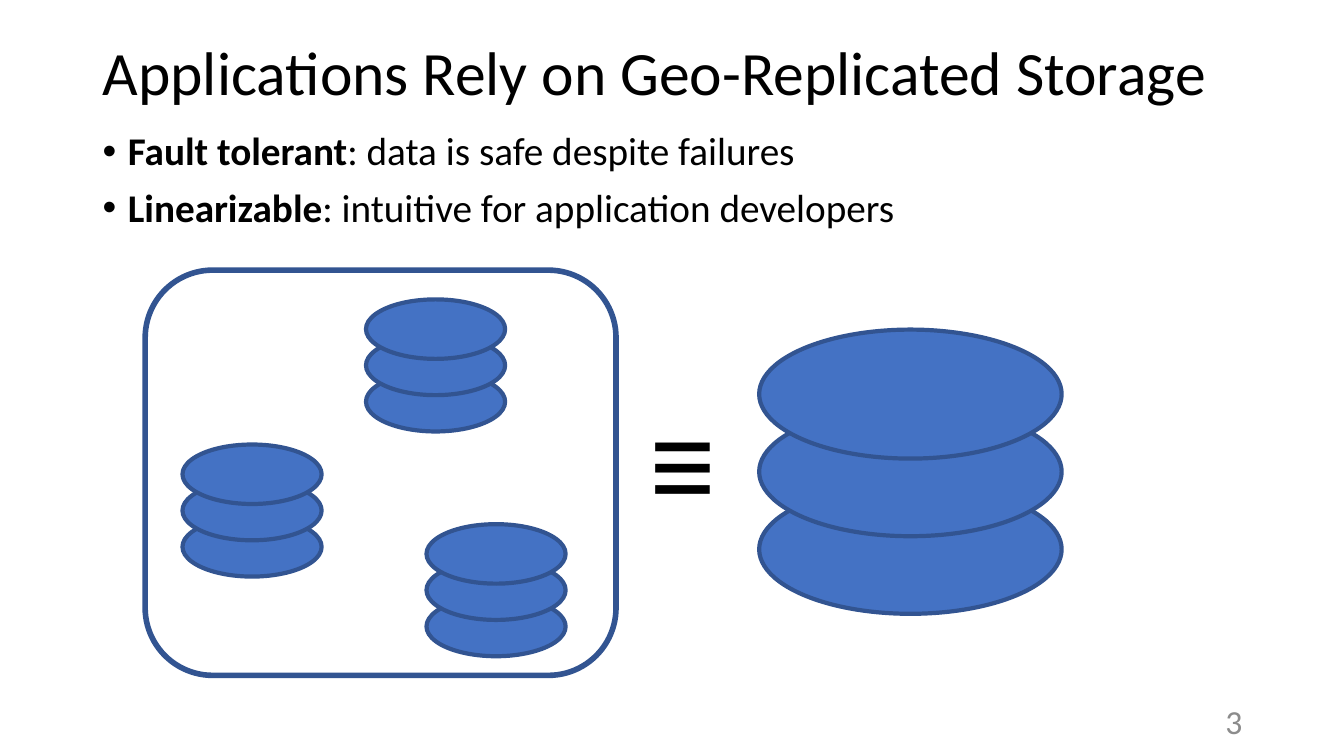
from lxml.etree import SubElement
from pptx import Presentation
from pptx.dml.color import RGBColor
from pptx.enum.shapes import MSO_SHAPE
from pptx.enum.text import MSO_ANCHOR, PP_ALIGN
from pptx.oxml.ns import qn
from pptx.util import Inches, Pt

FONT = "Calibri"
BLACK = RGBColor(0x00, 0x00, 0x00)
GRAY = RGBColor(0x8C, 0x8C, 0x8C)
BLUE = RGBColor(0x44, 0x72, 0xC4)
DARK_BLUE = RGBColor(0x32, 0x54, 0x91)

BENEFITS = [
    ("Fault tolerant", ": data is safe despite failures"),
    ("Linearizable", ": intuitive for application developers"),
]
REPLICAS = [(4.23, 5.2), (3.63, 2.97), (1.81, 4.41)]


def add_text_box(slide, left, top, width, height, anchor=MSO_ANCHOR.TOP, wrap=True):
    box = slide.shapes.add_textbox(Inches(left), Inches(top), Inches(width), Inches(height))
    frame = box.text_frame
    frame.word_wrap = wrap
    frame.vertical_anchor = anchor
    return frame


def add_run(paragraph, text, size, color=BLACK, bold=False):
    run = paragraph.add_run()
    run.text = text
    run.font.name = FONT
    run.font.size = Pt(size)
    run.font.bold = bold
    run.font.color.rgb = color


def set_bullet(paragraph):
    properties = paragraph._p.get_or_add_pPr()
    properties.set("marL", str(Inches(0.25)))
    properties.set("indent", str(Inches(-0.25)))
    SubElement(properties, qn("a:buFont")).set("typeface", "Arial")
    SubElement(properties, qn("a:buChar")).set("char", "•")


def add_title(slide, text):
    frame = add_text_box(slide, 0.92, 0.02, 11.5, 1.45, MSO_ANCHOR.MIDDLE)
    paragraph = frame.paragraphs[0]
    paragraph.line_spacing = 0.9
    add_run(paragraph, text, 44)


def add_benefits(slide):
    frame = add_text_box(slide, 0.92, 1.26, 11.5, 1.18)
    for index, (term, explanation) in enumerate(BENEFITS):
        paragraph = frame.add_paragraph() if index else frame.paragraphs[0]
        paragraph.line_spacing = 0.9
        paragraph.space_before = Pt(10)
        set_bullet(paragraph)
        add_run(paragraph, term, 28, bold=True)
        add_run(paragraph, explanation, 28)


def add_slide_number(slide, number):
    frame = add_text_box(slide, 9.42, 6.95, 3, 0.4, MSO_ANCHOR.MIDDLE)
    paragraph = frame.paragraphs[0]
    paragraph.alignment = PP_ALIGN.RIGHT
    add_run(paragraph, number, 24, GRAY)


def add_outlined_shape(shapes, kind, left, top, width, height, line_width, fill=None):
    shape = shapes.add_shape(kind, Inches(left), Inches(top), Inches(width), Inches(height))
    shape.shadow.inherit = False
    if fill is None:
        shape.fill.background()
    else:
        shape.fill.solid()
        shape.fill.fore_color.rgb = fill
    shape.line.color.rgb = DARK_BLUE
    shape.line.width = Pt(line_width)


def add_database(slide, left, top, width, height, step):
    group = slide.shapes.add_group_shape()
    for level in (2, 1, 0):
        add_outlined_shape(group.shapes, MSO_SHAPE.OVAL, left, top + level * step,
                           width, height, 3, BLUE)


def main():
    presentation = Presentation()
    presentation.slide_width = Inches(13.33)
    presentation.slide_height = Inches(7.5)
    slide = presentation.slides.add_slide(presentation.slide_layouts[6])

    add_title(slide, "Applications Rely on Geo-Replicated Storage")
    add_benefits(slide)
    add_slide_number(slide, "3")
    add_outlined_shape(slide.shapes, MSO_SHAPE.ROUNDED_RECTANGLE, 1.44, 2.68, 4.67, 4.02, 4)

    equivalence = add_text_box(slide, 6.34, 3.69, 0.87, 1.72, wrap=False)
    add_run(equivalence.paragraphs[0], "≡", 96)

    for left, top in REPLICAS:
        add_database(slide, left, top, 1.38, 0.59, 0.36)
    add_database(slide, 7.53, 3.27, 3, 1.28, 0.77)

    presentation.save("out.pptx")


if __name__ == "__main__":
    main()
